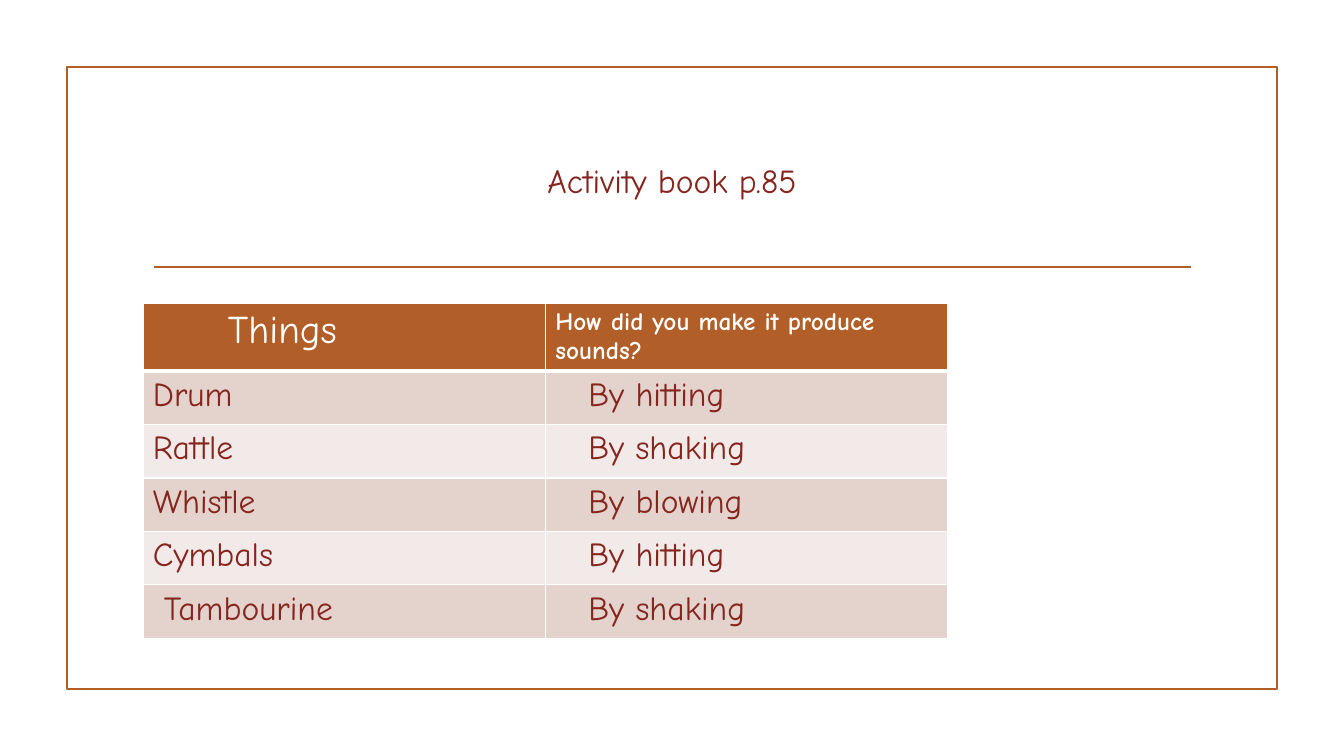
from dataclasses import dataclass

from lxml import etree
from pptx import Presentation
from pptx.dml.color import RGBColor
from pptx.enum.shapes import MSO_CONNECTOR, MSO_SHAPE
from pptx.enum.text import MSO_ANCHOR, PP_ALIGN
from pptx.oxml.ns import qn
from pptx.util import Pt

EMU_PER_PX = 914400 / 100.8
RECTANGLE = MSO_SHAPE.RECTANGLE
STRAIGHT = MSO_CONNECTOR.STRAIGHT
MIDDLE = MSO_ANCHOR.MIDDLE
CENTER = PP_ALIGN.CENTER
TITLE_ONLY = 5


@dataclass(frozen=True)
class Theme:
    font: str = "Comic Neue"
    accent: str = "B15E28"
    ink: str = "85251E"
    white: str = "FFFFFF"
    bands: tuple = ("E4D2CD", "F2EAE8")
    body_size: int = 24
    things_size: int = 28
    question_size: int = 18
    rule_width: float = 1.25
    grid_width: int = 1
    header_rule_width: int = 3


def px(length):
    return round(length * EMU_PER_PX)


def rgb(color):
    return RGBColor.from_string(color)


class SlideBuilder:
    def __init__(self, presentation, theme):
        self.theme = theme
        self.slide = presentation.slides.add_slide(presentation.slide_layouts[TITLE_ONLY])

    def style(self, paragraph, size, color, bold=False):
        for run in paragraph.runs:
            run.font.name = self.theme.font
            run.font.size = Pt(size)
            run.font.bold = bold
            run.font.color.rgb = rgb(color)

    def outline(self, line):
        line.color.rgb = rgb(self.theme.accent)
        line.width = Pt(self.theme.rule_width)

    def frame(self, left, top, width, height):
        border = self.slide.shapes.add_shape(RECTANGLE, px(left), px(top), px(width), px(height))
        border.shadow.inherit = False
        border.fill.background()
        self.outline(border.line)

    def rule(self, left, right, y):
        divider = self.slide.shapes.add_connector(STRAIGHT, px(left), px(y), px(right), px(y))
        self.outline(divider.line)
        etree.SubElement(divider._element.spPr, qn("a:effectLst"))

    def title(self, wording, left, top, width, height):
        heading = self.slide.shapes.title
        heading.left, heading.top = px(left), px(top)
        heading.width, heading.height = px(width), px(height)
        heading.text_frame.text = wording
        heading.text_frame.vertical_anchor = MIDDLE
        paragraph = heading.text_frame.paragraphs[0]
        paragraph.alignment = CENTER
        self.style(paragraph, self.theme.body_size, self.theme.ink)

    def cell_borders(self, cell, widths):
        properties = cell._tc.get_or_add_tcPr()
        for side, width in widths.items():
            edge = etree.SubElement(properties, qn(f"a:ln{side}"), w=str(Pt(width)))
            fill = etree.SubElement(edge, qn("a:solidFill"))
            etree.SubElement(fill, qn("a:srgbClr"), val=self.theme.white)

    def cell(self, cell, wording, indent, fill, size, color, bold, widths):
        self.cell_borders(cell, widths)
        cell.fill.solid()
        cell.fill.fore_color.rgb = rgb(fill)
        cell.margin_left = px(indent)
        cell.text_frame.text = wording
        self.style(cell.text_frame.paragraphs[0], size, color, bold)

    def table(self, header, body, left, top, width, header_height, body_height):
        theme = self.theme
        grid = self.slide.shapes.add_table(
            len(body) + 1, len(header), px(left), px(top),
            px(width), px(header_height + body_height)).table
        grid.first_row = False
        grid.horz_banding = False
        for column in grid.columns:
            column.width = px(width / len(header))
        for row in grid.rows:
            row.height = px(body_height / len(body))
        grid.rows[0].height = px(header_height)

        plain = dict.fromkeys("LRTB", theme.grid_width)
        header_edges = plain | {"B": theme.header_rule_width}
        below_header = plain | {"T": theme.header_rule_width}
        for column, (wording, indent, size, bold) in enumerate(header):
            self.cell(grid.cell(0, column), wording, indent, theme.accent,
                      size, theme.white, bold, header_edges)
        for row, entries in enumerate(body):
            band = theme.bands[row % len(theme.bands)]
            edges = plain if row else below_header
            for column, (wording, indent) in enumerate(entries):
                self.cell(grid.cell(row + 1, column), wording, indent, band,
                          theme.body_size, theme.ink, False, edges)


def main():
    theme = Theme()
    presentation = Presentation()
    presentation.slide_width = px(1344)
    presentation.slide_height = px(756)

    activity = SlideBuilder(presentation, theme)
    activity.frame(67, 67, 1210, 622)
    activity.rule(154, 1191, 267)
    activity.title("Activity book p.85", 143, 108, 1058, 144)

    header = [
        ("Things", 85, theme.things_size, False),
        ("How did you make it produce sounds?", 10, theme.question_size, True),
    ]
    sounds = [
        ("Drum", 10, "By hitting"),
        ("Rattle", 10, "By shaking"),
        ("Whistle", 10, "By blowing"),
        ("Cymbals", 10, "By hitting"),
        ("Tambourine", 21, "By shaking"),
    ]
    body = [((thing, indent), (action, 43)) for thing, indent, action in sounds]
    activity.table(header, body, 143, 303, 805, 68, 267)
    presentation.save("out.pptx")


if __name__ == "__main__":
    main()
